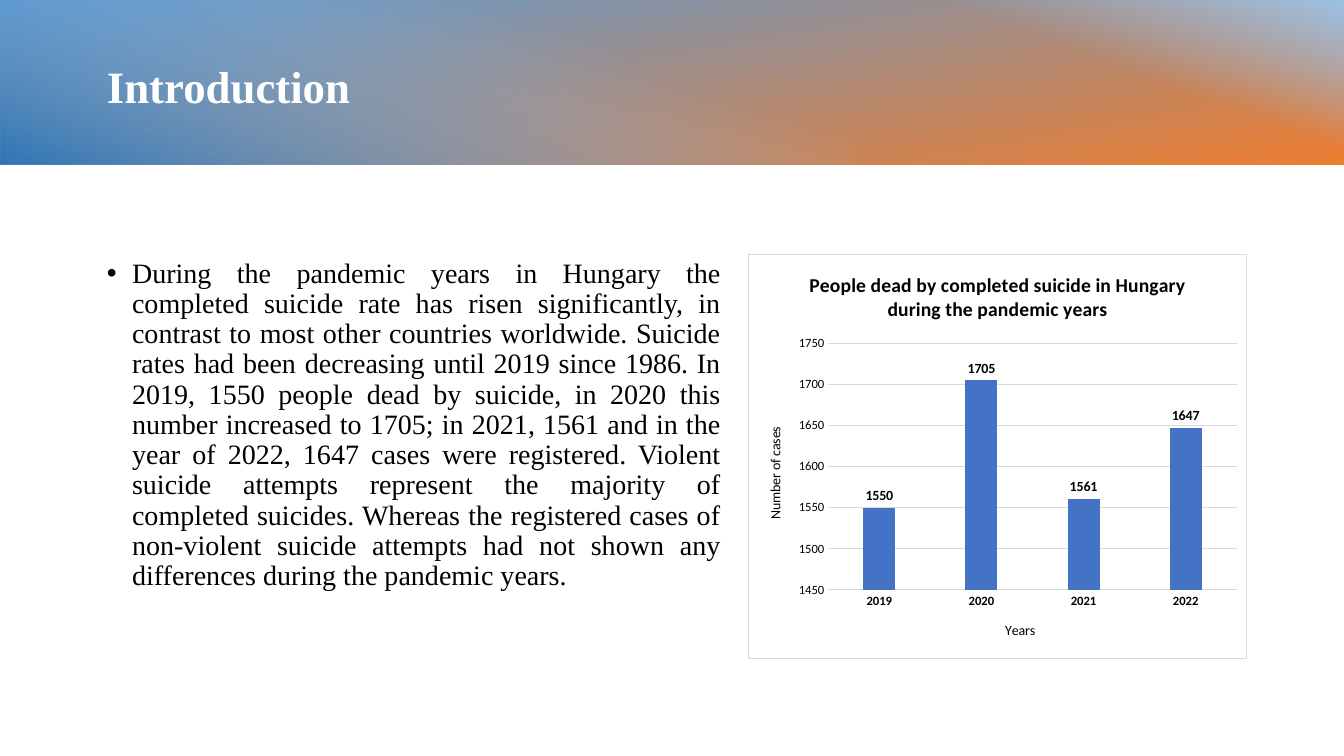
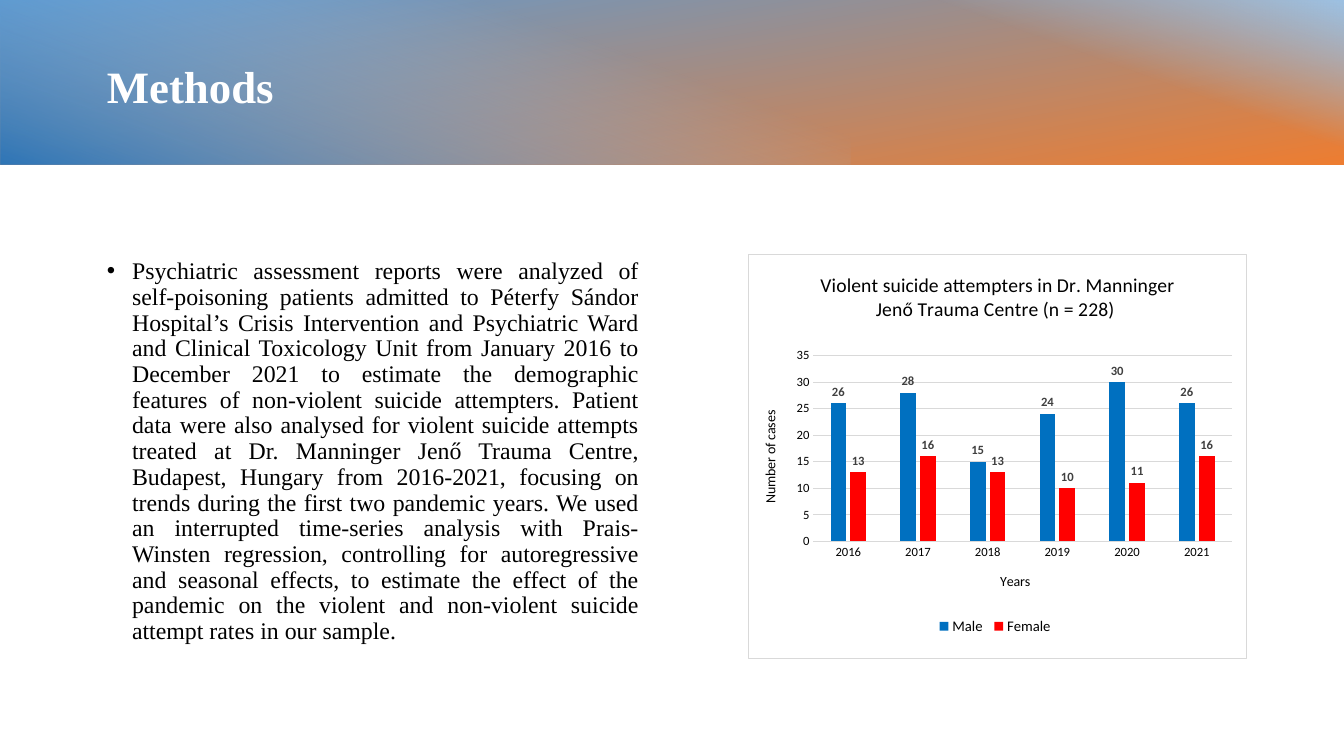
from lxml import etree
from pptx import Presentation
from pptx import util as u
from pptx.chart.data import CategoryChartData
from pptx.dml.color import RGBColor
from pptx.enum import chart as charts, shapes, text
from pptx.oxml import parse_xml
from pptx.oxml.ns import nsdecls, qn

SERIF, SANS = "Times New Roman", "Calibri"
BLACK, WHITE, GREY, RULE = "000000", "FFFFFF", "404040", "D9D9D9"
BANDS = [
    ((5.84, -5.87, 1.66, 13.34), 270, 170, (0, "5B9BD5", 100), (100, "ED7D31", 100)),
    ((9.75, -1.97, 1.65, 5.54), 270, 20, (59, "9DC3E6", 0), (100, "9DC3E6", 100)),
    ((3.39, -3.42, 1.66, 8.44), 90, 20, (29, "9DC3E6", 0), (100, "2E75B6", 100)),
]
INTRODUCTION = (
    "During the pandemic years in Hungary the completed suicide rate has risen "
    "significantly, in contrast to most other countries worldwide. Suicide rates had been "
    "decreasing until 2019 since 1986. In 2019, 1550 people dead by suicide, in 2020 this "
    "number increased to 1705; in 2021, 1561 and in the year of 2022, 1647 cases were "
    "registered. Violent suicide attempts represent the majority of completed suicides. "
    "Whereas the registered cases of non-violent suicide attempts had not shown any "
    "differences during the pandemic years."
)
METHODS = (
    "Psychiatric assessment reports were analyzed of self-poisoning patients admitted to "
    "Péterfy Sándor Hospital’s Crisis Intervention and Psychiatric Ward and Clinical "
    "Toxicology Unit from January 2016 to December 2021 to estimate the demographic features "
    "of non-violent suicide attempters. Patient data were also analysed for violent suicide "
    "attempts treated at Dr. Manninger Jenő Trauma Centre, Budapest, Hungary from 2016-2021, "
    "focusing on trends during the first two pandemic years. We used an interrupted "
    "time-series analysis with Prais-Winsten regression, controlling for autoregressive and "
    "seasonal effects, to estimate the effect of the pandemic on the violent and non-violent "
    "suicide attempt rates in our sample."
)


def rgb(value):
    return RGBColor.from_string(value)


def style_font(font, name, size, color, bold=False):
    font.name, font.size, font.bold = name, u.Pt(size), bold
    font.color.rgb = rgb(color)


def move(placeholder, left, top, width, height):
    placeholder.left, placeholder.top = u.Inches(left), u.Inches(top)
    placeholder.width, placeholder.height = u.Inches(width), u.Inches(height)


def add_band(slide, box, rotation, angle, *stops):
    band = slide.shapes.add_shape(shapes.MSO_SHAPE.RECTANGLE, *map(u.Inches, box))
    band.rotation = rotation
    band.shadow.inherit = False
    band.line.fill.background()
    band.fill.gradient()
    band.fill.gradient_angle = 360 - angle
    for stop, (position, color, opacity) in zip(band.fill.gradient_stops, stops):
        stop.position = position / 100
        stop.color.rgb = rgb(color)
        if opacity < 100:
            etree.SubElement(stop._gs[0], qn("a:alpha"), val=str(opacity * 1000))
    return band


def add_content_slide(deck, heading, body, body_width, body_size):
    slide = deck.slides.add_slide(deck.slide_layouts[1])
    for depth, band in enumerate(BANDS):
        slide.shapes._spTree.insert(2 + depth, add_band(slide, *band)._element)

    title = slide.shapes.title
    move(title, 0.96, 0.33, 11.46, 1.1)
    title.text_frame.text = heading
    title.text_frame.vertical_anchor = text.MSO_ANCHOR.MIDDLE
    line = title.text_frame.paragraphs[0]
    line.alignment, line.line_spacing = text.PP_ALIGN.LEFT, 0.9
    style_font(line.font, SERIF, 32, WHITE, True)

    summary = slide.placeholders[1]
    move(summary, 0.96, 2.52, body_width, 4.02)
    summary.text_frame.text = body
    summary.text_frame.auto_size = text.MSO_AUTO_SIZE.NONE
    bullet = summary.text_frame.paragraphs[0]
    bullet.alignment, bullet.line_spacing = text.PP_ALIGN.JUSTIFY, 0.9
    bullet.space_before = u.Pt(0)
    style_font(bullet.font, SERIF, body_size, BLACK)
    properties = bullet._p.get_or_add_pPr()
    properties.set("marL", str(u.Inches(0.25)))
    properties.set("indent", str(u.Inches(-0.25)))
    return slide


def set_layout(part, x, y, size=None, inner=False):
    for old in part.findall(qn("c:layout")):
        part.remove(old)
    settings = [("layoutTarget", "inner")] if inner else []
    settings += [("xMode", "edge"), ("yMode", "edge"), ("x", x), ("y", y)]
    if size:
        settings += zip("wh", size)
    layout = parse_xml(f'<c:layout {nsdecls("c")}><c:manualLayout/></c:layout>')
    for name, value in settings:
        etree.SubElement(layout[0], qn(f"c:{name}"), val=str(value))
    before = part.find(qn("c:tx"))
    if before is None:
        before = part.find(qn("c:legendPos"))
    if before is None:
        part.insert(0, layout)
    else:
        before.addnext(layout)


def set_frame(chart):
    frame = parse_xml(
        f'<c:spPr {nsdecls("c", "a")}><a:solidFill><a:srgbClr val="{WHITE}"/></a:solidFill>'
        f'<a:ln w="{u.Pt(0.75)}"><a:solidFill><a:srgbClr val="{RULE}"/></a:solidFill></a:ln>'
        "</c:spPr>"
    )
    chart._chartSpace.find(qn("c:chart")).addnext(frame)


def set_title(owner_title, wording, size, bold=False):
    owner_title.text_frame.text = wording
    style_font(owner_title.text_frame.paragraphs[0].font, SANS, size, BLACK, bold)


def style_axis(axis, wording, title_at, bold=False):
    axis.major_tick_mark = axis.minor_tick_mark = charts.XL_TICK_MARK.NONE
    style_font(axis.tick_labels.font, SANS, 9, BLACK, bold)
    set_title(axis.axis_title, wording, 10)
    set_layout(axis.axis_title._element, *title_at)


def rule_line(line):
    line.color.rgb = rgb(RULE)
    line.width = u.Pt(0.75)


def add_cases_chart(slide, heading, years, series, scale, plot_at, years_at, cases_at,
                    label_size, label_color, bold=False, overlap=0):
    data = CategoryChartData()
    data.categories = years
    for name, values, _ in series:
        data.add_series(name, values)
    chart = slide.shapes.add_chart(
        charts.XL_CHART_TYPE.COLUMN_CLUSTERED,
        *map(u.Inches, (7.42, 2.52, 4.95, 4.02)), data).chart
    style_font(chart.font, SANS, 10, BLACK)
    set_frame(chart)
    chart.has_title = True
    set_title(chart.chart_title, heading, 14, bold)
    chart.has_legend = False

    style_axis(chart.category_axis, "Years", years_at, bold)
    rule_line(chart.category_axis.format.line)
    cases = chart.value_axis
    style_axis(cases, "Number of cases", cases_at)
    cases.axis_title.text_frame._txBody.bodyPr.set("rot", "-5400000")
    cases.minimum_scale, cases.maximum_scale, cases.major_unit = scale
    cases.format.line.fill.background()
    rule_line(cases.major_gridlines.format.line)

    plot = chart.plots[0]
    plot.gap_width, plot.overlap, plot.vary_by_categories = 219, overlap, False
    set_layout(chart._chartSpace.find(".//" + qn("c:plotArea")),
               *plot_at[:2], plot_at[2:], inner=True)
    for columns, (_, _, color) in zip(plot.series, series):
        columns.format.fill.solid()
        columns.format.fill.fore_color.rgb = rgb(color)
        labels = columns.data_labels
        labels.show_value = True
        labels.position = charts.XL_LABEL_POSITION.OUTSIDE_END
        style_font(labels.font, SANS, label_size, label_color, True)
    return chart


def add_legend(chart):
    chart.has_legend = True
    chart.legend.position = charts.XL_LEGEND_POSITION.BOTTOM
    chart.legend.include_in_layout = False
    style_font(chart.legend.font, SANS, 10.5, BLACK)
    set_layout(chart.legend._element, 0.37, 0.89, (0.25, 0.06))


def main():
    deck = Presentation()
    deck.slide_width, deck.slide_height = u.Inches(13.33), u.Inches(7.5)

    introduction = add_content_slide(deck, "Introduction", INTRODUCTION, 6.29, 20)
    add_cases_chart(
        introduction,
        "People dead by completed suicide in Hungary during the pandemic years",
        ["2019", "2020", "2021", "2022"],
        [("Series 1", (1550, 1705, 1561, 1647), "4472C4")],
        scale=(1450, 1750, 50), plot_at=(0.16, 0.22, 0.82, 0.61),
        years_at=(0.51, 0.9), cases_at=(0.03, 0.42),
        label_size=10, label_color=BLACK, bold=True)

    methods = add_content_slide(deck, "Methods", METHODS, 5.48, 17)
    attempters = add_cases_chart(
        methods,
        "Violent suicide attempters in Dr. Manninger Jenő Trauma Centre (n = 228) ",
        ["2016", "2017", "2018", "2019", "2020", "2021"],
        [("Male", (26, 28, 15, 24, 30, 26), "0070C0"),
         ("Female", (13, 16, 13, 10, 11, 16), "FF0000")],
        scale=(0, 35, 5), plot_at=(0.13, 0.25, 0.84, 0.46),
        years_at=(0.5, 0.78), cases_at=(0.02, 0.38),
        label_size=9, label_color=GREY, overlap=-27)
    add_legend(attempters)

    deck.save("out.pptx")


if __name__ == "__main__":
    main()
